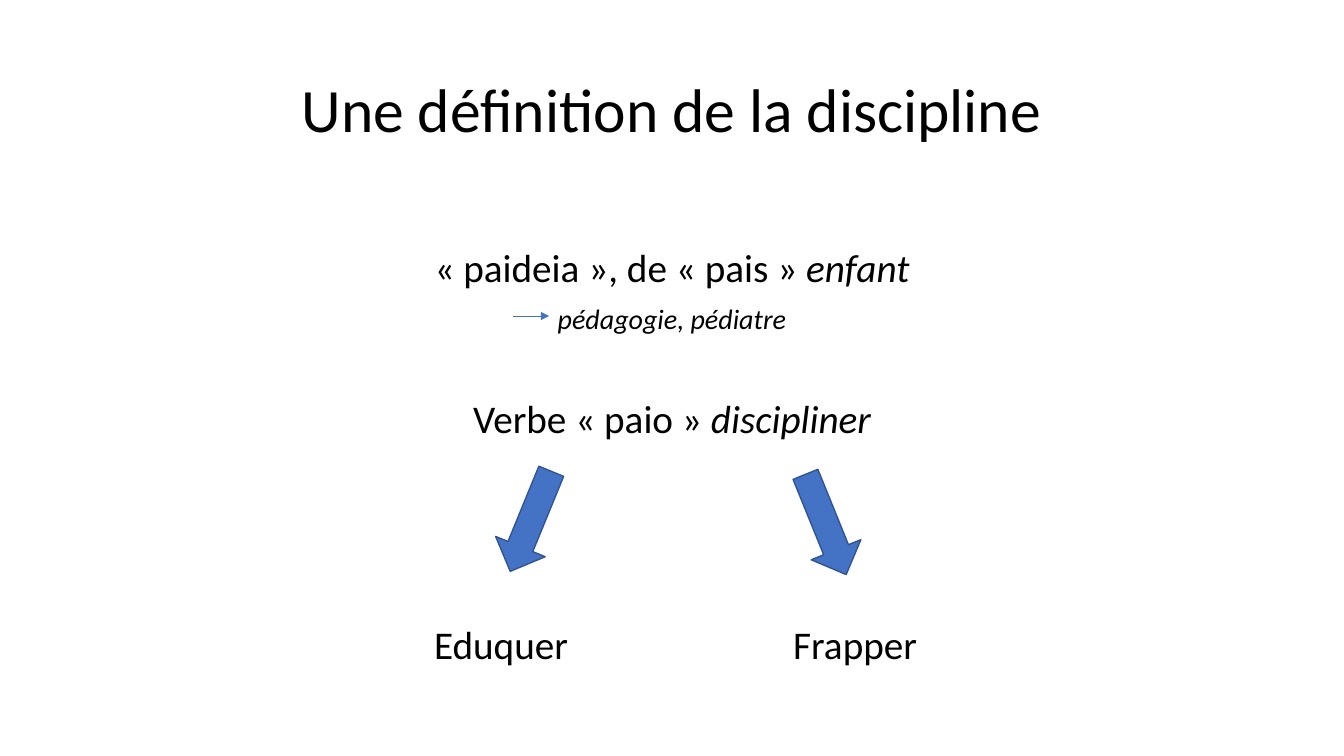
from lxml import etree
from pptx import Presentation
from pptx.dml.color import RGBColor
from pptx.enum.shapes import MSO_CONNECTOR, MSO_SHAPE
from pptx.enum.text import MSO_ANCHOR, PP_ALIGN
from pptx.oxml.ns import qn
from pptx.util import Pt

PX = 9525  # 96 px to the inch
FONT = "Calibri"
BLACK = RGBColor(0x00, 0x00, 0x00)
BLUE = RGBColor(0x44, 0x72, 0xC4)
DARK_BLUE = RGBColor(0x32, 0x54, 0x91)
CENTER, LEFT = PP_ALIGN.CENTER, PP_ALIGN.LEFT
TOP, MIDDLE = MSO_ANCHOR.TOP, MSO_ANCHOR.MIDDLE
DOWN_ARROW, STRAIGHT = MSO_SHAPE.DOWN_ARROW, MSO_CONNECTOR.STRAIGHT

deck = Presentation()
deck.slide_width, deck.slide_height = 1280 * PX, 720 * PX
page = deck.slides.add_slide(deck.slide_layouts[6])


def add_text(left, top, width, height, lines, align, anchor, line_spacing):
    """Each line is (size, space before, [(text, italic), ...])."""
    box = page.shapes.add_textbox(left * PX, top * PX, width * PX, height * PX)
    frame = box.text_frame
    frame.word_wrap = True
    frame.vertical_anchor = anchor
    for index, (size, space_before, spans) in enumerate(lines):
        para = frame.add_paragraph() if index else frame.paragraphs[0]
        para.alignment = align
        para.line_spacing = line_spacing
        para.space_before = Pt(space_before)
        for text, italic in spans:
            span = para.add_run()
            span.text = text
            span.font.name = FONT
            span.font.size = Pt(size)
            span.font.italic = italic
            span.font.color.rgb = BLACK


# Title
title = [(44, 0, [("Une définition de la discipline", False)])]
add_text(88, 38, 1104, 139, title, CENTER, MIDDLE, 0.9)

# Etymology
etymology = [
    (28, 0, [("« paideia », de « pais » ", False), ("enfant", True)]),
    (20, 10, [("pédagogie, pédiatre", True)]),
    (28, 46, [("Verbe « paio » ", False), ("discipliner", True)]),
]
add_text(88, 232, 1104, 217, etymology, CENTER, TOP, 0.9)

# Block arrows to the two meanings
for left, top, angle in [(480, 445, 22.3), (761, 448, 337.9)]:
    arrow = page.shapes.add_shape(DOWN_ARROW, left * PX, top * PX, 51 * PX, 103 * PX)
    arrow.rotation = angle
    arrow.shadow.inherit = False
    arrow.fill.solid()
    arrow.fill.fore_color.rgb = BLUE
    arrow.line.color.rgb = DARK_BLUE
    arrow.line.width = Pt(1)

# The two meanings
for left, meaning in [(404, "Eduquer"), (746, "Frapper")]:
    add_text(left, 586, 214, 55, [(28, 0, [(meaning, False)])], LEFT, TOP, 1.0)

# Thin arrow to the derived words
pointer = page.shapes.add_connector(STRAIGHT, 489 * PX, 301 * PX, 523 * PX, 301 * PX)
pointer.line.color.rgb = BLUE
pointer.line.width = Pt(0.5)
etree.SubElement(pointer.line._get_or_add_ln(), qn("a:tailEnd"), type="triangle")
etree.SubElement(pointer._element.spPr, qn("a:effectLst"))

deck.save("out.pptx")
